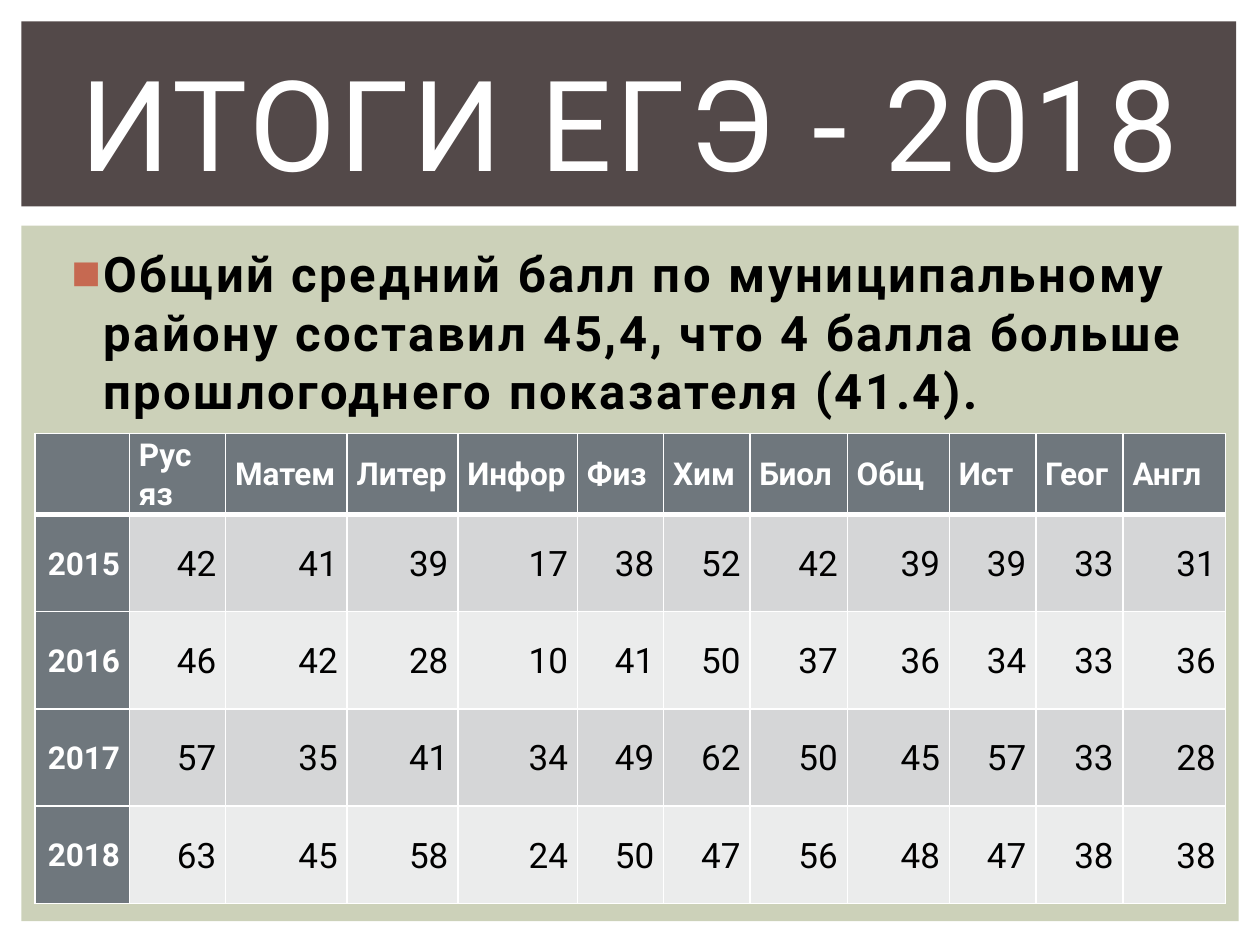
"""Builds the slide with the exam results from 2015 to 2018."""
from lxml.etree import SubElement
from pptx import Presentation as Deck
from pptx.dml.color import RGBColor
from pptx.enum.shapes import MSO_SHAPE as Shape
from pptx.enum.text import MSO_ANCHOR as Anchor, PP_ALIGN as Align
from pptx.oxml import parse_xml
from pptx.oxml.ns import nsdecls, qn
from pptx.util import Cm, Pt

FONT = "Roboto"
WHITE, BLACK, SLATE = "FFFFFF", "000000", "6F777D"
BANDS = "D5D6D7", "EBECEC"
HEADS = ["", "Рус яз", "Матем", "Литер", "Инфор", "Физ", "Хим", "Биол",
         "Общ", "Ист", "Геог", "Англ"]
SCORES = {
    2015: [42, 41, 39, 17, 38, 52, 42, 39, 39, 33, 31],
    2016: [46, 42, 28, 10, 41, 50, 37, 36, 34, 33, 36],
    2017: [57, 35, 41, 34, 49, 62, 50, 45, 57, 33, 28],
    2018: [63, 45, 58, 24, 50, 47, 56, 48, 47, 38, 38],
}
WIDTHS = [1.9, 1.94, 2.45, 2.23, 2.41, 1.74, 1.74, 1.96, 2.06, 1.74, 1.76, 2.06]
HEAD_H, ROW_H = 1.6, 1.96


def color(code):
    """Turn a hex string into a colour."""
    return RGBColor.from_string(code)


def write(frame, text, size, tone=BLACK, bold=False, align=Align.LEFT,
          space=0, line=None, anchor=Anchor.TOP):
    """Put one formatted paragraph into a text frame and return it."""
    frame.word_wrap = True
    frame.vertical_anchor = anchor
    para = frame.paragraphs[0]
    para.alignment = align
    para.line_spacing = line
    run = para.add_run()
    run.text = text
    font = run.font
    font.name, font.size, font.bold = FONT, Pt(size), bold
    font.color.rgb = color(tone)
    if space:
        run._r.get_or_add_rPr().set("spc", str(int(space * 100)))
    return para


def add_panel(slide, left, top, width, height, tone):
    """Draw a plain filled rectangle."""
    panel = slide.shapes.add_shape(
        Shape.RECTANGLE, Cm(left), Cm(top), Cm(width), Cm(height))
    panel.shadow.inherit = False
    panel.fill.solid()
    panel.fill.fore_color.rgb = color(tone)
    panel.line.fill.background()


def add_text(slide, left, top, width, height, text, size, **style):
    """Add a text box and return its paragraph."""
    box = slide.shapes.add_textbox(Cm(left), Cm(top), Cm(width), Cm(height))
    return write(box.text_frame, text, size, **style)


def add_bullet(para, mark, tone):
    """Give a paragraph a coloured bullet with a hanging indent."""
    para.space_before = Pt(2)
    props = para._p.get_or_add_pPr()
    props.set("marL", str(Cm(0.76)))
    props.set("indent", str(-Cm(0.64)))
    shade = SubElement(props, qn("a:buClr"))
    SubElement(shade, qn("a:srgbClr")).set("val", tone)
    SubElement(props, qn("a:buFont")).set("typeface", "Arial")
    SubElement(props, qn("a:buChar")).set("char", mark)


def add_edges(cell, top, base):
    """Draw white cell borders with the given top and bottom widths."""
    props = cell._tc.get_or_add_tcPr()
    for spot, (side, width) in enumerate(zip("LRTB", (1, 1, top, base))):
        props.insert(spot, parse_xml(
            f'<a:ln{side} {nsdecls("a")} w="{Pt(width)}"><a:solidFill>'
            f'<a:srgbClr val="{WHITE}"/></a:solidFill></a:ln{side}>'))


def fill_cell(cell, text, row, col):
    """Style a cell by its place in the table and write its text."""
    head = row == 0 or col == 0
    cell.fill.solid()
    cell.fill.fore_color.rgb = color(SLATE if head else BANDS[(row - 1) % 2])
    add_edges(cell, 3 if row == 1 else 1, 3 if row == 0 else 1)
    cell.margin_left = cell.margin_right = Cm(0.19)
    cell.margin_top = cell.margin_bottom = 0
    cell.vertical_anchor = Anchor.MIDDLE
    if text:
        write(cell.text_frame, text, 18 if head else 20,
              tone=WHITE if head else BLACK, bold=head, line=1.07,
              align=Align.RIGHT if row else Align.LEFT, anchor=None)


def add_scores(slide, left, top):
    """Add the table of scores by year and subject."""
    rows = [HEADS] + [[year, *marks] for year, marks in SCORES.items()]
    highs = [HEAD_H] + [ROW_H] * len(SCORES)
    table = slide.shapes.add_table(
        len(rows), len(HEADS), Cm(left), Cm(top),
        Cm(sum(WIDTHS)), Cm(sum(highs))).table
    for column, width in zip(table.columns, WIDTHS):
        column.width = Cm(width)
    for line, high in zip(table.rows, highs):
        line.height = Cm(high)
    for row, texts in enumerate(rows):
        for col, text in enumerate(texts):
            fill_cell(table.cell(row, col), str(text), row, col)


def main():
    """Build and save the slide."""
    deck = Deck()
    deck.slide_width, deck.slide_height = Cm(25.4), Cm(19.05)
    slide = deck.slides.add_slide(deck.slide_layouts[6])
    add_panel(slide, 0.43, 4.55, 24.54, 14.02, "CCD1B9")
    add_panel(slide, 0.43, 0.43, 24.49, 3.73, "534949")
    para = add_text(
        slide, 1.07, 4.78, 23.34, 12.24,
        "Общий средний балл по муниципальному району составил 45,4, "
        "что 4 балла больше прошлогоднего показателя (41.4).",
        28, bold=True, space=1.5)
    add_bullet(para, "■", "C66951")
    add_text(slide, 1.07, 0.99, 23.29, 2.92, "ИТОГИ ЕГЭ - 2018", 72,
             tone=WHITE, align=Align.CENTER, space=2, anchor=Anchor.MIDDLE)
    add_scores(slide, 0.71, 8.74)
    deck.save("out.pptx")


if __name__ == "__main__":
    main()
